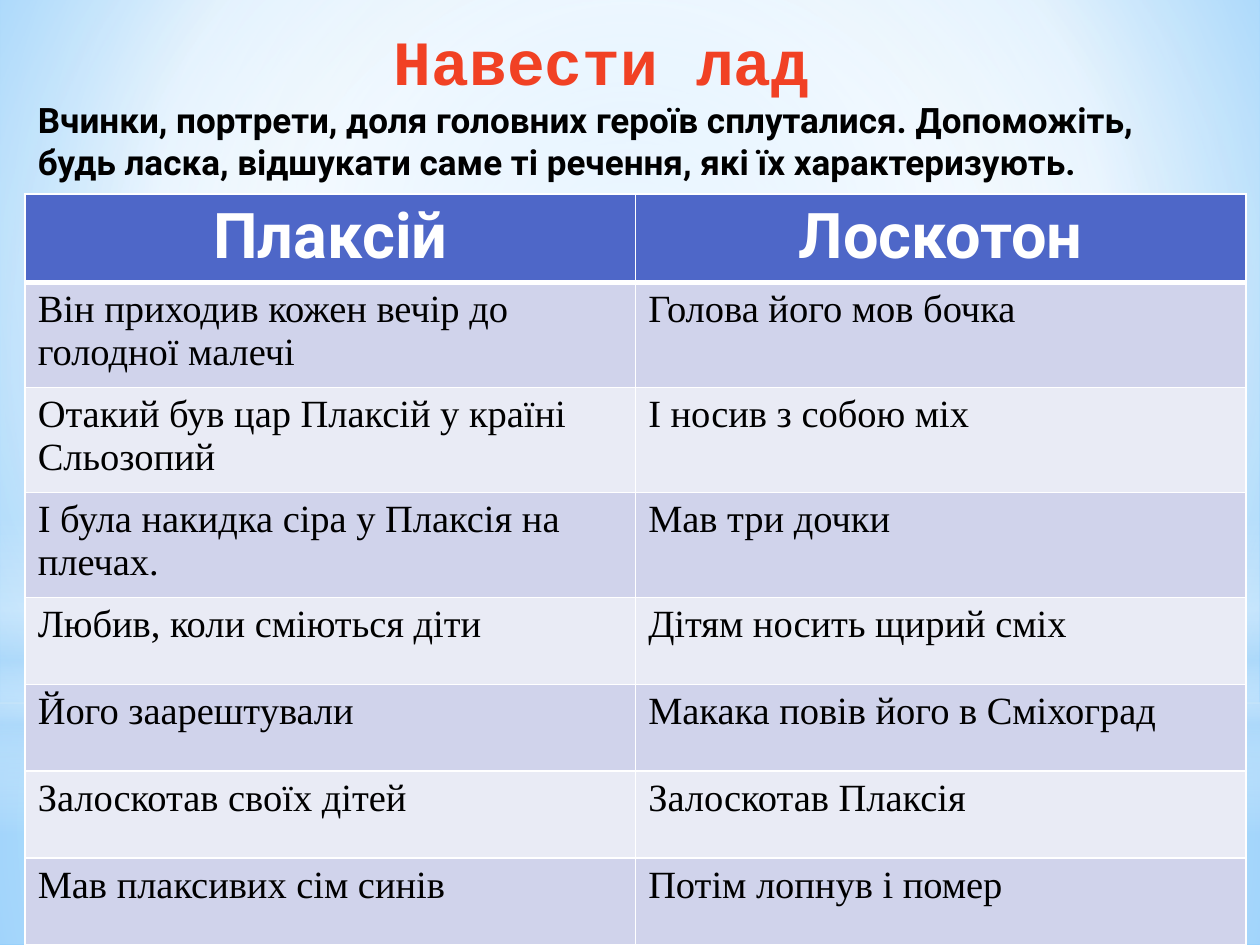
import pptx
import pptx.util
import pptx.dml.color
import pptx.enum.shapes
import pptx.enum.text
import pptx.oxml
import pptx.oxml.ns

Inches = pptx.util.Inches
Shapes = pptx.enum.shapes.MSO_SHAPE
Align = pptx.enum.text.PP_ALIGN
qn = pptx.oxml.ns.qn
NAMESPACE = pptx.oxml.ns.nsdecls("a")

HEADER = ("Плаксій", "Лоскотон")
SENTENCES = [
    ("Він приходив кожен вечір до голодної малечі", "Голова його мов бочка"),
    ("Отакий був цар Плаксій у країні Сльозопий", "І носив з собою міх"),
    ("І була накидка сіра у Плаксія на плечах.", "Мав три дочки"),
    ("Любив, коли сміються діти", "Дітям носить щирий сміх"),
    ("Його заарештували", "Макака повів його в Сміхоград"),
    ("Залоскотав своїх дітей", "Залоскотав Плаксія"),
    ("Мав плаксивих сім синів", "Потім лопнув і помер"),
]
ROW_HEIGHTS = [0.69] + [0.83] * 3 + [0.69] * 4
CENTER = (50, 50, 50, 50)


def color(value):
    return pptx.dml.color.RGBColor.from_string(value)


def add_span(para, text, font, size, value, bold):
    span = para.add_run()
    span.text = text
    span.font.name = font
    span.font.size = pptx.util.Pt(size)
    span.font.color.rgb = color(value)
    span.font.bold = bold


def gradient(stops, focus=None):
    """Stops are (position, colour, opacity); without a focus it runs downwards."""
    marks = "".join(
        f'<a:gs pos="{place * 1000}"><a:srgbClr val="{value}">'
        f'<a:alpha val="{opacity * 1000}"/></a:srgbClr></a:gs>'
        for place, value, opacity in stops)
    if focus:
        sides = " ".join(f'{side}="{part * 1000}"' for side, part in zip("ltrb", focus))
        shade = f'<a:path path="circle"><a:fillToRect {sides}/></a:path>'
    else:
        shade = '<a:lin ang="5400000" scaled="0"/>'
    return pptx.oxml.parse_xml(
        f'<a:gradFill {NAMESPACE} rotWithShape="1"><a:gsLst>{marks}</a:gsLst>{shade}</a:gradFill>')


def replace_fill(properties, fill):
    properties.replace(properties.find(qn("a:solidFill")), fill)


def add_glow(page, kind, box, stops, focus=None):
    glow = page.shapes.add_shape(kind, *map(Inches, box))
    glow.shadow.inherit = False
    glow.line.fill.background()
    glow.fill.solid()
    replace_fill(glow.element.spPr, gradient(stops, focus))


def draw_sky(page):
    # Slide background
    page.background.fill.solid()
    stops = [(0, "9ED5FF", 100), (60, "FFFFFF", 100), (100, "5BB9FF", 100)]
    properties = page.element.find(".//" + qn("p:bgPr"))
    replace_fill(properties, gradient(stops, (20, 10, 20, 60)))

    # Translucent layers, from back to front
    add_glow(page, Shapes.RECTANGLE, (0, 5.58, 10, 1.92),
             [(0, "FFFFFF", 91), (37, "FFFFFF", 76), (100, "B4DCFA", 79)], CENTER)
    add_glow(page, Shapes.RECTANGLE, (0, 0, 10, 5.58),
             [(0, "FFFFFF", 89), (48, "FFFFFF", 62), (100, "B4DCFA", 79)], CENTER)
    add_glow(page, Shapes.RECTANGLE, (0, 4.12, 10, 2.5),
             [(0, "FFFFFF", 0), (29, "FFFFFF", 30), (45, "B4DCFA", 40),
              (55, "FFFFFF", 26), (65, "B4DCFA", 60), (100, "FFFFFF", 0)])
    add_glow(page, Shapes.OVAL, (0, 1.75, 10, 5.58),
             [(0, "FFFFFF", 100), (56, "FFFFFF", 0)], CENTER)


def write_heading(page, box):
    title = page.shapes.title
    title.left, title.top, title.width, title.height = map(Inches, box)
    frame = title.text_frame
    frame.word_wrap = True
    frame.auto_size = pptx.enum.text.MSO_AUTO_SIZE.SHAPE_TO_FIT_TEXT
    frame.vertical_anchor = pptx.enum.text.MSO_ANCHOR.TOP
    para = frame.paragraphs[0]
    para.alignment = Align.CENTER
    add_span(para, "Навести лад ", "Courier New", 36, "F14124", True)
    para = frame.add_paragraph()
    para.alignment = Align.LEFT
    add_span(para, "Вчинки, портрети, доля головних героїв сплуталися. Допоможіть, "
             "будь ласка, відшукати саме ті речення, які їх характеризують.",
             "Roboto", 20, "000000", True)
    # Keep the heading in front of the background layers
    page.shapes.element.append(title.element)


def set_borders(cell, bottom):
    properties = cell._tc.get_or_add_tcPr()
    for index, (side, width) in enumerate(zip("LRTB", (1, 1, 1, bottom))):
        properties.insert(index, pptx.oxml.parse_xml(
            f'<a:ln{side} {NAMESPACE} w="{width * 12700}"><a:solidFill>'
            f'<a:srgbClr val="FFFFFF"/></a:solidFill></a:ln{side}>'))


def draw_table(page, box):
    table = page.shapes.add_table(len(ROW_HEIGHTS), len(HEADER), *map(Inches, box)).table
    for row, height in zip(table.rows, ROW_HEIGHTS):
        row.height = Inches(height)
    for row, texts in enumerate([HEADER] + SENTENCES):
        for column, text in enumerate(texts):
            cell = table.cell(row, column)
            para = cell.text_frame.paragraphs[0]
            cell.fill.solid()
            if row == 0:
                para.alignment = Align.CENTER
                add_span(para, text, "Roboto", 36, "FFFFFF", True)
                cell.fill.fore_color.rgb = color("4E67C8")
            else:
                add_span(para, text, "Times New Roman", 22, "000000", False)
                cell.fill.fore_color.rgb = color("D0D3EB" if row % 2 else "E9EBF5")
            set_borders(cell, 3 if row == 0 else 1)


def main():
    deck = pptx.Presentation()
    deck.slide_width, deck.slide_height = Inches(10), Inches(7.5)
    page = deck.slides.add_slide(deck.slide_layouts[5])
    draw_sky(page)
    write_heading(page, (0.2, 0.13, 9.45, 1.38))
    draw_table(page, (0.2, 1.54, 9.69, sum(ROW_HEIGHTS)))
    deck.save("out.pptx")


if __name__ == "__main__":
    main()
